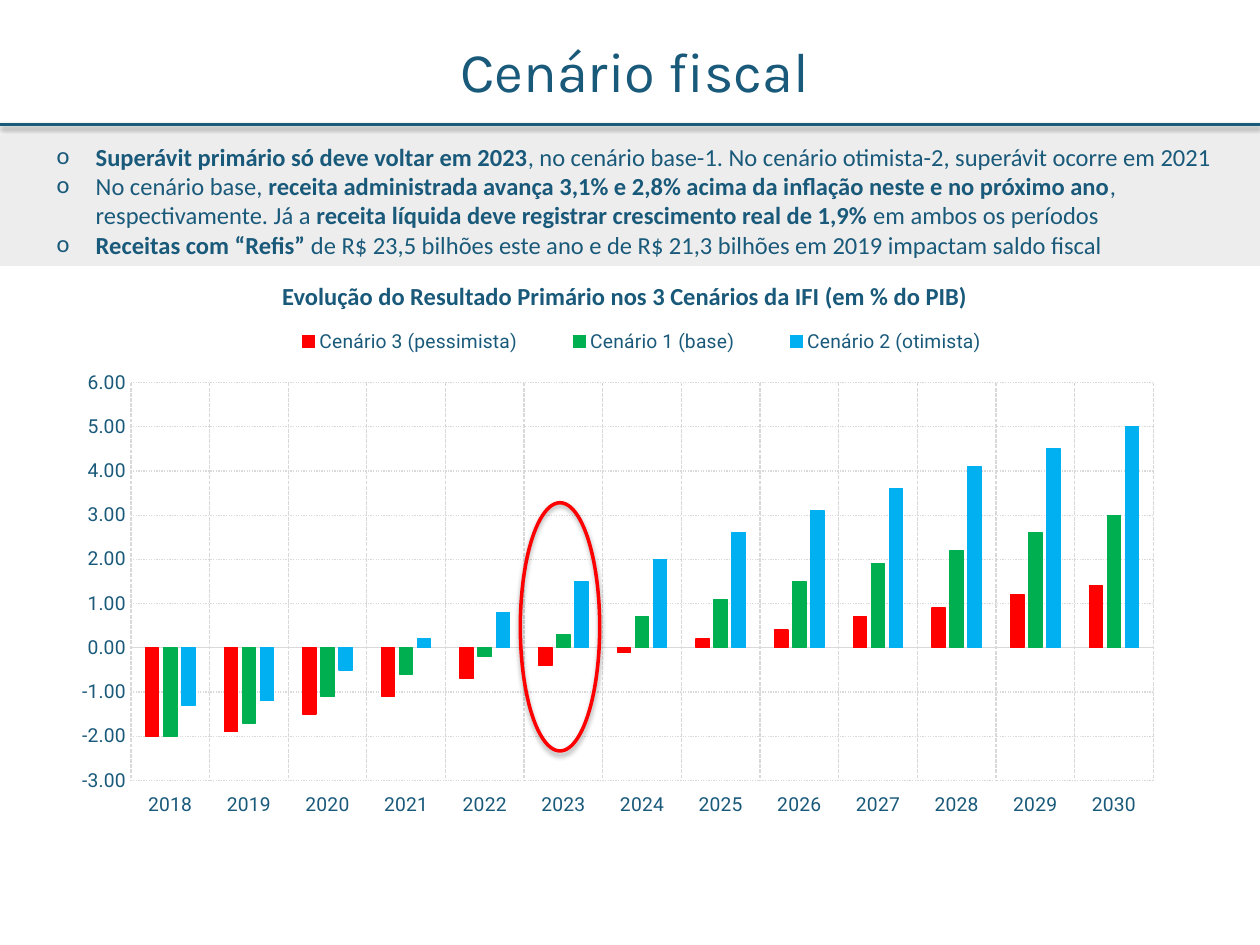
"""Build the fiscal scenario slide with its primary balance chart."""
from dataclasses import dataclass

from lxml import etree
from pptx import Presentation
from pptx.chart.data import CategoryChartData
from pptx.dml.color import RGBColor
from pptx.enum.chart import XL_CHART_TYPE, XL_LEGEND_POSITION, XL_TICK_LABEL_POSITION, XL_TICK_MARK
from pptx.enum.dml import MSO_LINE
from pptx.enum.shapes import MSO_CONNECTOR, MSO_SHAPE
from pptx.enum.text import MSO_ANCHOR, MSO_AUTO_SIZE, PP_ALIGN
from pptx.oxml.ns import qn
from pptx.util import Inches, Pt

COLUMNS = XL_CHART_TYPE.COLUMN_CLUSTERED
LEGEND_TOP = XL_LEGEND_POSITION.TOP
LABELS_LOW = XL_TICK_LABEL_POSITION.LOW
NO_TICK = XL_TICK_MARK.NONE
DASHED, DOTTED = MSO_LINE.SQUARE_DOT, MSO_LINE.ROUND_DOT
STRAIGHT, OVAL = MSO_CONNECTOR.STRAIGHT, MSO_SHAPE.OVAL
TOP, MIDDLE = MSO_ANCHOR.TOP, MSO_ANCHOR.MIDDLE
NO_AUTOFIT = MSO_AUTO_SIZE.NONE
CENTER, LEFT = PP_ALIGN.CENTER, PP_ALIGN.LEFT

WIDTH, HEIGHT = Inches(10), Inches(7.5)
GRID_COLUMNS, GRID_ROWS = 100, 75


@dataclass(frozen=True)
class Theme:
    ink: str = "19597A"
    band: str = "EDEDED"
    grid: str = "D9D9D9"
    highlight: str = "FF0000"
    title_font: str = "Karla"
    body_font: str = "Calibri"
    chart_font: str = "Roboto"
    title_size: float = 32
    body_size: float = 14
    chart_size: float = 11
    rule: float = 2
    hairline: float = 0.75


@dataclass(frozen=True)
class Area:
    column: float
    row: float
    columns: float
    rows: float

    def emu(self) -> tuple[int, ...]:
        across, down = WIDTH / GRID_COLUMNS, HEIGHT / GRID_ROWS
        return (round(self.column * across), round(self.row * down),
                round(self.columns * across), round(self.rows * down))


@dataclass(frozen=True)
class Phrase:
    text: str
    bold: bool = False


@dataclass(frozen=True)
class Scenario:
    name: str
    color: str
    balances: tuple[float, ...]


THEME = Theme()
YEARS = [str(year) for year in range(2018, 2031)]
FINDINGS = (
    (Phrase("Superávit primário só deve voltar em 2023", True),
     Phrase(", no cenário base-1. No cenário otimista-2, superávit ocorre em 2021")),
    (Phrase("No cenário base, "),
     Phrase("receita administrada avança 3,1% e 2,8% acima da inflação neste e no próximo ano", True),
     Phrase(", respectivamente. Já a "),
     Phrase("receita líquida deve registrar crescimento real de 1,9% ", True),
     Phrase("em ambos os períodos")),
    (Phrase("Receitas com “Refis” ", True),
     Phrase("de R$ 23,5 bilhões este ano e de R$ 21,3 bilhões em 2019 impactam saldo fiscal")),
)
SCENARIOS = (
    Scenario("Cenário 3 (pessimista)", "FF0000",
             (-2, -1.9, -1.5, -1.1, -0.7, -0.4, -0.1, 0.2, 0.4, 0.7, 0.9, 1.2, 1.4)),
    Scenario("Cenário 1 (base)", "00B050",
             (-2, -1.7, -1.1, -0.6, -0.2, 0.3, 0.7, 1.1, 1.5, 1.9, 2.2, 2.6, 3)),
    Scenario("Cenário 2 (otimista)", "00B0F0",
             (-1.3, -1.2, -0.5, 0.2, 0.8, 1.5, 2, 2.6, 3.1, 3.6, 4.1, 4.5, 5)),
)


def place(shape, area: Area) -> None:
    """Move a shape to its grid area."""
    shape.left, shape.top, shape.width, shape.height = area.emu()


def style_font(font, name: str, size: float) -> None:
    """Apply a typeface and size in the ink colour."""
    font.name, font.size = name, Pt(size)
    font.color.rgb = RGBColor.from_string(THEME.ink)


def style_line(line, color: str, width: float) -> None:
    """Set the colour and width of a line."""
    line.color.rgb = RGBColor.from_string(color)
    line.width = Pt(width)


def prepare_frame(frame, anchor) -> None:
    """Give a text frame the slide's common margins."""
    frame.word_wrap, frame.auto_size, frame.vertical_anchor = True, NO_AUTOFIT, anchor
    frame.margin_left = frame.margin_right = frame.margin_top = frame.margin_bottom = Inches(0.05)


def write_heading(shape, text: str, anchor, font: str, size: float, bold: bool) -> None:
    """Write one centred line."""
    prepare_frame(shape.text_frame, anchor)
    heading = shape.text_frame.paragraphs[0]
    heading.text, heading.alignment = text, CENTER
    style_font(heading.font, font, size)
    heading.font.bold = bold


def write_findings(body) -> None:
    """Fill the body band with bulleted findings."""
    body.fill.solid()
    body.fill.fore_color.rgb = RGBColor.from_string(THEME.band)
    frame = body.text_frame
    prepare_frame(frame, MIDDLE)
    for index, phrases in enumerate(FINDINGS):
        finding = frame.add_paragraph() if index else frame.paragraphs[0]
        finding.alignment, finding.space_before = LEFT, Pt(0)
        properties = finding._p.get_or_add_pPr()
        properties.set("marL", str(Inches(0.71)))
        properties.set("indent", str(Inches(-0.31)))
        etree.SubElement(properties, qn("a:buFont"), typeface=THEME.body_font)
        etree.SubElement(properties, qn("a:buChar"), char="o")
        style_font(finding.font, THEME.body_font, THEME.body_size)
        for phrase in phrases:
            run = finding.add_run()
            run.text, run.font.bold = phrase.text, phrase.bold


def cast_shadow(shape, distance: float, opacity: int) -> None:
    """Add a soft shadow straight below a shape."""
    effects = etree.SubElement(shape._element.spPr, qn("a:effectLst"))
    shadow = etree.SubElement(effects, qn("a:outerShdw"), blurRad=str(Pt(3)), dist=str(Pt(distance)),
                              dir="5400000", rotWithShape="0")
    color = etree.SubElement(shadow, qn("a:srgbClr"), val="000000")
    etree.SubElement(color, qn("a:alpha"), val=str(opacity * 1000))


def fix_layout(element, position: int, shares: dict[str, float], inner: bool = False) -> None:
    """Pin a chart part to shares of the chart's size."""
    for previous in element.findall(qn("c:layout")):
        element.remove(previous)
    layout = etree.Element(qn("c:layout"))
    manual = etree.SubElement(layout, qn("c:manualLayout"))
    if inner:
        etree.SubElement(manual, qn("c:layoutTarget"), val="inner")
    for mode in ("xMode", "yMode"):
        etree.SubElement(manual, qn(f"c:{mode}"), val="edge")
    for key, share in shares.items():
        etree.SubElement(manual, qn(f"c:{key}"), val=str(share))
    element.insert(position, layout)


def style_axis(axis, dash) -> None:
    """Style the labels, ticks and gridlines of an axis."""
    axis.major_tick_mark = axis.minor_tick_mark = NO_TICK
    style_font(axis.tick_labels.font, THEME.chart_font, THEME.chart_size)
    axis.has_major_gridlines = True
    style_line(axis.major_gridlines.format.line, THEME.grid, THEME.hairline)
    axis.major_gridlines.format.line.dash_style = dash


def add_balance_chart(slide, area: Area) -> None:
    """Draw the primary balance of every scenario by year."""
    data = CategoryChartData(number_format="#,##0.00")
    data.categories = YEARS
    for scenario in SCENARIOS:
        data.add_series(scenario.name, scenario.balances)
    chart = slide.shapes.add_chart(COLUMNS, *area.emu(), data).chart
    chart.has_title = False
    style_font(chart.font, THEME.chart_font, THEME.chart_size)
    years, balance = chart.category_axis, chart.value_axis
    style_axis(years, DASHED)
    style_axis(balance, DOTTED)
    years.tick_label_position = LABELS_LOW
    style_line(years.format.line, THEME.grid, THEME.hairline)
    balance.format.line.fill.background()
    balance.minimum_scale, balance.maximum_scale, balance.major_unit = -3, 6, 1
    balance.tick_labels.number_format = "#,##0.00"
    balance.tick_labels.number_format_is_linked = False
    chart.has_legend = True
    chart.legend.position, chart.legend.include_in_layout = LEGEND_TOP, False
    style_font(chart.legend.font, THEME.chart_font, THEME.chart_size)
    fix_layout(chart.legend._element, 1, {"x": 0.17, "y": 0.01, "w": 0.7, "h": 0.08})
    fix_layout(chart._chartSpace.chart.plotArea, 0, {"x": 0.06, "y": 0.13, "w": 0.92, "h": 0.78}, True)
    plot = chart.plots[0]
    plot.gap_width, plot.overlap, plot.vary_by_categories = 219, -35, False
    for series, scenario in zip(plot.series, SCENARIOS):
        series.invert_if_negative = False
        series.format.fill.solid()
        series.format.fill.fore_color.rgb = RGBColor.from_string(scenario.color)
        style_line(series.format.line, scenario.color, THEME.hairline)


def main() -> None:
    """Compose and save the slide."""
    deck = Presentation()
    deck.slide_width, deck.slide_height = WIDTH, HEIGHT
    slide = deck.slides.add_slide(deck.slide_layouts[1])
    title, findings = slide.placeholders
    place(title, Area(12.2, 2.1, 76.4, 6.9))
    write_heading(title, "Cenário fiscal", MIDDLE, THEME.title_font, THEME.title_size, False)
    place(findings, Area(0, 10.7, 100, 10.4))
    write_findings(findings)
    left, top, width, _ = Area(0, 9.9, 100, 0).emu()
    divider = slide.shapes.add_connector(STRAIGHT, left, top, left + width, top)
    style_line(divider.line, THEME.ink, THEME.rule)
    cast_shadow(divider, 1.6, 38)
    caption = slide.shapes.add_textbox(*Area(5.9, 21.8, 87.4, 3.4).emu())
    write_heading(caption, "Evolução do Resultado Primário nos 3 Cenários da IFI (em % do PIB)",
                  TOP, THEME.body_font, THEME.body_size, True)
    add_balance_chart(slide, Area(5.1, 25.1, 88.2, 40.5))
    turning_point = slide.shapes.add_shape(OVAL, *Area(41.3, 39.9, 6.3, 19.7).emu())
    turning_point.fill.background()
    style_line(turning_point.line, THEME.highlight, THEME.rule)
    cast_shadow(turning_point, 1.8, 35)
    deck.save("out.pptx")


if __name__ == "__main__":
    main()
